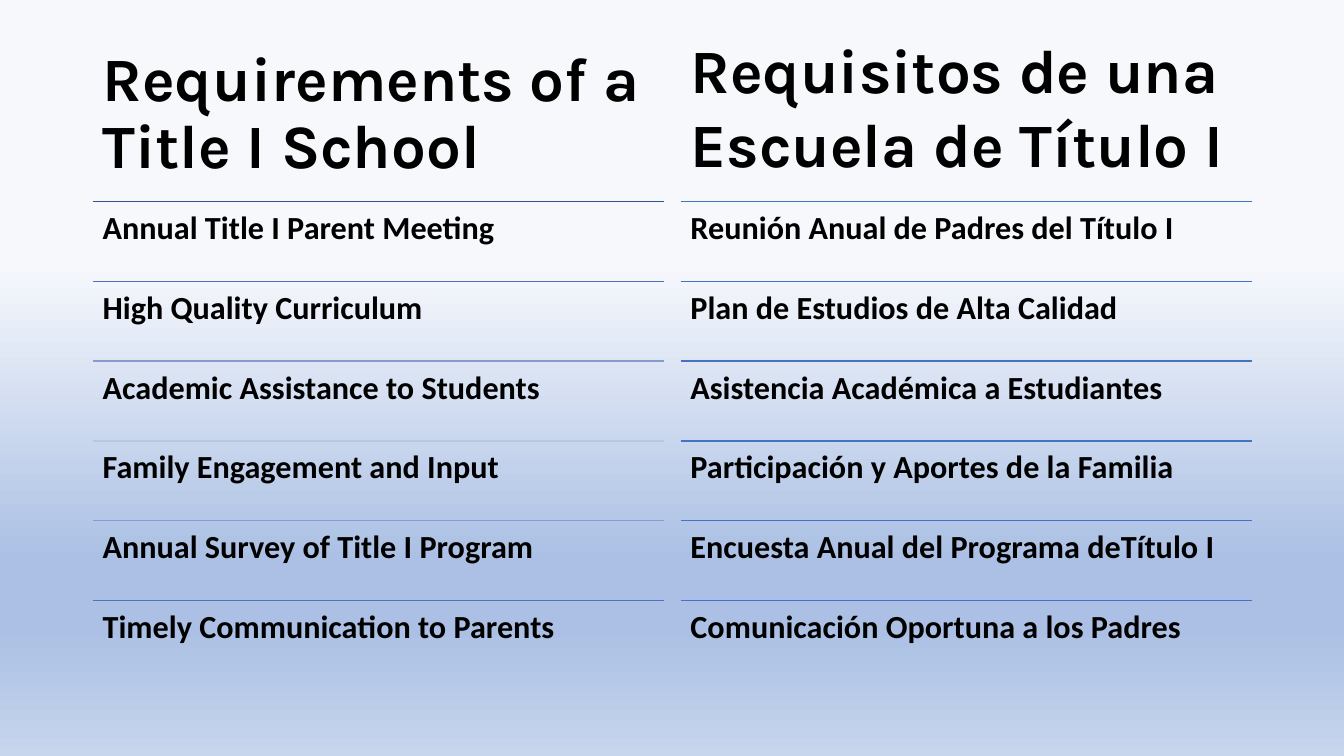
from dataclasses import dataclass

import pptx
import pptx.dml.color
import pptx.enum.shapes
import pptx.enum.text
import pptx.oxml
import pptx.oxml.ns
import pptx.slide
import pptx.util
from pptx.util import Inches

ROW_TOP = 2.0
ROW_HEIGHT = 4.75 / 6
COLUMN_WIDTH = 5.67
BACKGROUND_STOPS = [(35, "F6F8FC"), (74, "ABC0E4"), (83, "ABC0E4"), (100, "C7D5ED")]


@dataclass
class Heading:
    text: str
    top: float
    width: float
    height: float
    anchor: pptx.enum.text.MSO_ANCHOR
    line_spacing: float


@dataclass
class Column:
    left: float
    heading: Heading
    requirements: list[str]
    rule_colors: list[str]


COLUMNS = [
    Column(
        0.92,
        Heading("Requirements of a Title I School", 0.4, COLUMN_WIDTH, 1.45,
                pptx.enum.text.MSO_ANCHOR.BOTTOM, 0.9),
        [
            "Annual Title I Parent Meeting",
            "High Quality Curriculum",
            "Academic Assistance to Students",
            "Family Engagement and Input",
            "Annual Survey of Title I Program",
            "Timely Communication to Parents",
        ],
        ["325491", "4F73BD", "879BCE", "BCC6E2", "879BCE", "4F73BD"],
    ),
    Column(
        6.75,
        Heading("Requisitos de una Escuela de Título I", 0.27, 6.01, 1.58,
                pptx.enum.text.MSO_ANCHOR.TOP, 1.0),
        [
            "Reunión Anual de Padres del Título I",
            "Plan de Estudios de Alta Calidad",
            "Asistencia Académica a Estudiantes",
            "Participación y Aportes de la Familia",
            "Encuesta Anual del Programa deTítulo I",
            "Comunicación Oportuna a los Padres",
        ],
        ["4472C4"] * 6,
    ),
]


def rgb(color: str) -> pptx.dml.color.RGBColor:
    return pptx.dml.color.RGBColor.from_string(color)


def fill_background(s: pptx.slide.Slide) -> None:
    fill = s.background.fill
    fill.gradient()
    fill.gradient_angle = 270
    stops = s.element.find(".//" + pptx.oxml.ns.qn("a:gsLst"))
    for stop in list(stops):
        stops.remove(stop)
    for percent, color in BACKGROUND_STOPS:
        stops.append(pptx.oxml.parse_xml(
            f'<a:gs {pptx.oxml.ns.nsdecls("a")} pos="{percent * 1000}">'
            f'<a:srgbClr val="{color}"/></a:gs>'))


def add_text(s: pptx.slide.Slide, text: str, left: float, top: float, width: float,
             height: float, font: str, size: float, line_spacing: float,
             margin_y: float, anchor: pptx.enum.text.MSO_ANCHOR) -> None:
    sp = s.shapes.add_textbox(Inches(left), Inches(top), Inches(width), Inches(height))
    tf = sp.text_frame
    tf.word_wrap = True
    tf.vertical_anchor = anchor
    tf.margin_left = tf.margin_right = Inches(0.1)
    tf.margin_top = tf.margin_bottom = Inches(margin_y)
    p = tf.paragraphs[0]
    p.text = text
    p.line_spacing = line_spacing
    p.font.name = font
    p.font.size = pptx.util.Pt(size)
    p.font.bold = True
    p.font.color.rgb = rgb("000000")


def add_rule(s: pptx.slide.Slide, left: float, top: float, color: str) -> None:
    line = s.shapes.add_connector(
        pptx.enum.shapes.MSO_CONNECTOR.STRAIGHT,
        Inches(left), Inches(top), Inches(left + COLUMN_WIDTH), Inches(top))
    line.line.color.rgb = rgb(color)
    line.line.width = pptx.util.Pt(1)
    line.element.spPr.append(pptx.oxml.parse_xml(
        f'<a:effectLst {pptx.oxml.ns.nsdecls("a")}/>'))


def add_column(s: pptx.slide.Slide, column: Column) -> None:
    h = column.heading
    add_text(s, h.text, column.left, h.top, h.width, h.height,
             "Karla", 44, h.line_spacing, 0.05, h.anchor)
    for i, (text, color) in enumerate(zip(column.requirements, column.rule_colors)):
        top = ROW_TOP + i * ROW_HEIGHT
        add_rule(s, column.left, top, color)
        add_text(s, text, column.left, top, COLUMN_WIDTH, ROW_HEIGHT,
                 "Calibri", 23, 0.9, 0.1, pptx.enum.text.MSO_ANCHOR.TOP)


def main() -> None:
    prs = pptx.Presentation()
    prs.slide_width = Inches(13.33)
    prs.slide_height = Inches(7.5)
    s = prs.slides.add_slide(prs.slide_layouts[6])
    fill_background(s)
    for column in COLUMNS:
        add_column(s, column)
    prs.save("out.pptx")


if __name__ == "__main__":
    main()
